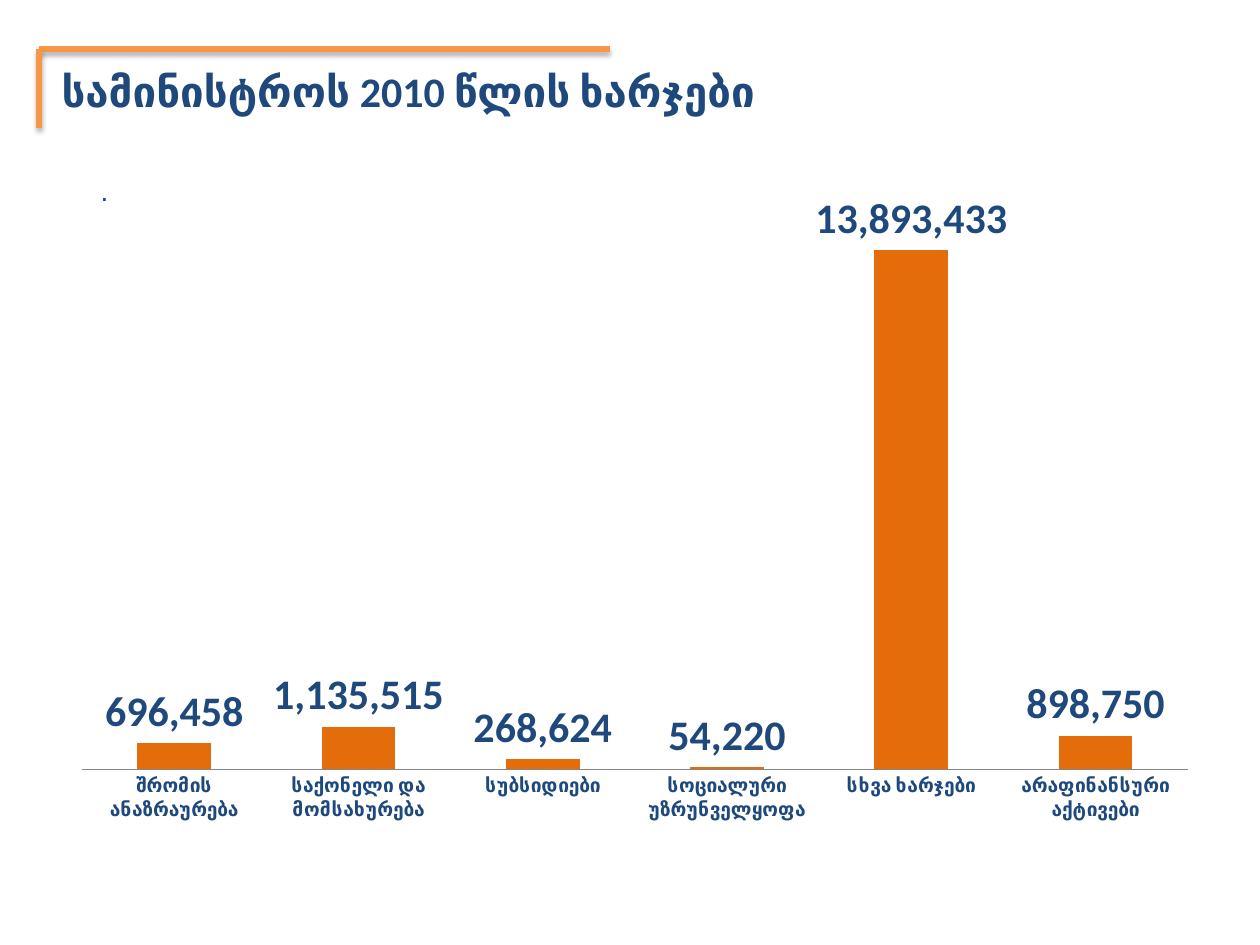
from lxml import etree
from pptx import Presentation, util as u
from pptx.chart.data import CategoryChartData
from pptx.dml.color import RGBColor
from pptx.enum import chart as ch, shapes
from pptx.oxml import parse_xml
from pptx.oxml.ns import nsdecls, qn

COLORS = {"navy": "1F497D", "accent": "F79646", "bar": "E46C0A", "axis": "868686"}
WIDTH, HEIGHT = 10, 7.5
EXPENSES = {
    "შრომის ანაზრაურება": 696458,
    "საქონელი და მომსახურება": 1135515,
    "სუბსიდიები": 268624,
    "სოციალური უზრუნველყოფა": 54220,
    "სხვა ხარჯები": 13893433,
    "არაფინანსური აქტივები": 898750,
}
PLOT_AREA = {"x": 0.02, "y": 0.02, "w": 0.96, "h": 0.88}


def rgb(name):
    return RGBColor.from_string(COLORS[name])


class Deck:
    """Holds the style and the current slide; positions are shares of the slide."""

    def __init__(self, font="Calibri"):
        self.font = font
        self.prs = Presentation()
        self.prs.slide_width, self.prs.slide_height = u.Inches(WIDTH), u.Inches(HEIGHT)
        self.s = self.prs.slides.add_slide(self.prs.slide_layouts[6])

    def box(self, *shares):
        sizes = (self.prs.slide_width, self.prs.slide_height) * 2
        return [round(share * size) for share, size in zip(shares, sizes)]

    def style(self, font, size, bold=True, name=None):
        font.name, font.size, font.bold = name or self.font, u.Pt(size), bold
        font.color.rgb = rgb("navy")

    def text(self, place, words, size, bold=True, name=None):
        tf = self.s.shapes.add_textbox(*self.box(*place)).text_frame
        tf.word_wrap = True
        p = tf.paragraphs[0]
        p.text = words
        self.style(p.runs[0].font, size, bold, name)

    def rule(self, *ends):
        """Accent line with a soft shadow below it."""
        line = self.s.shapes.add_connector(shapes.MSO_CONNECTOR.STRAIGHT, *self.box(*ends))
        line.line.color.rgb, line.line.width = rgb("accent"), u.Pt(3)
        line._element.spPr.append(parse_xml(
            f'<a:effectLst {nsdecls("a")}><a:outerShdw blurRad="{u.Pt(3.1)}" '
            f'dist="{u.Pt(1.8)}" dir="5400000" rotWithShape="0"><a:srgbClr val="000000">'
            '<a:alpha val="35000"/></a:srgbClr></a:outerShdw></a:effectLst>'))

    def columns(self, place, values):
        data = CategoryChartData(number_format="#,##0")
        data.categories = list(values)
        data.add_series("Series 1", list(values.values()))
        chart = self.s.shapes.add_chart(
            ch.XL_CHART_TYPE.COLUMN_CLUSTERED, *self.box(*place), data).chart
        chart.has_legend = chart.has_title = False
        chart.font.name, chart.font.size = self.font, u.Pt(10)

        plot = chart.plots[0]
        plot.vary_by_categories, plot.gap_width, plot.overlap = False, 150, -25
        fill = plot.series[0].format.fill
        fill.solid()
        fill.fore_color.rgb = rgb("bar")
        plot.has_data_labels = True
        labels = plot.data_labels
        labels.show_value = True
        labels.number_format, labels.number_format_is_linked = "#,##0", False
        labels.position = ch.XL_LABEL_POSITION.OUTSIDE_END
        self.style(labels.font, 24)

        axis = chart.category_axis
        axis.major_tick_mark = axis.minor_tick_mark = ch.XL_TICK_MARK.NONE
        axis.format.line.color.rgb = rgb("axis")
        self.style(axis.tick_labels.font, 11)
        scale = chart.value_axis
        scale.visible = scale.has_major_gridlines = False
        scale.minimum_scale, scale.maximum_scale = 0, 16_000_000
        self.fix_plot_area(chart)

    def fix_plot_area(self, chart):
        area = chart._chartSpace.chart.plotArea
        for old in area.findall(qn("c:layout")):
            area.remove(old)
        layout = etree.Element(qn("c:layout"))
        manual = etree.SubElement(layout, qn("c:manualLayout"))
        settings = {"layoutTarget": "inner", "xMode": "edge", "yMode": "edge", **PLOT_AREA}
        for tag, value in settings.items():
            etree.SubElement(manual, qn(f"c:{tag}")).set("val", str(value))
        area.insert(0, layout)


def main():
    deck = Deck()
    left, top = 0.31 / WIDTH, 0.39 / HEIGHT
    deck.text((0.039, 0.063, 0.688, 0.121), "სამინისტროს 2010 წლის ხარჯები", 24)
    deck.rule(left, top, 0.484, top)
    deck.rule(left, top, left, 0.136)
    deck.text((0.07, 0.177, 0.883, 0.049), ".", 16, bold=False, name="Arial")
    deck.columns((0.047, 0.167, 0.914, 0.719), EXPENSES)
    deck.prs.save("out.pptx")


if __name__ == "__main__":
    main()
